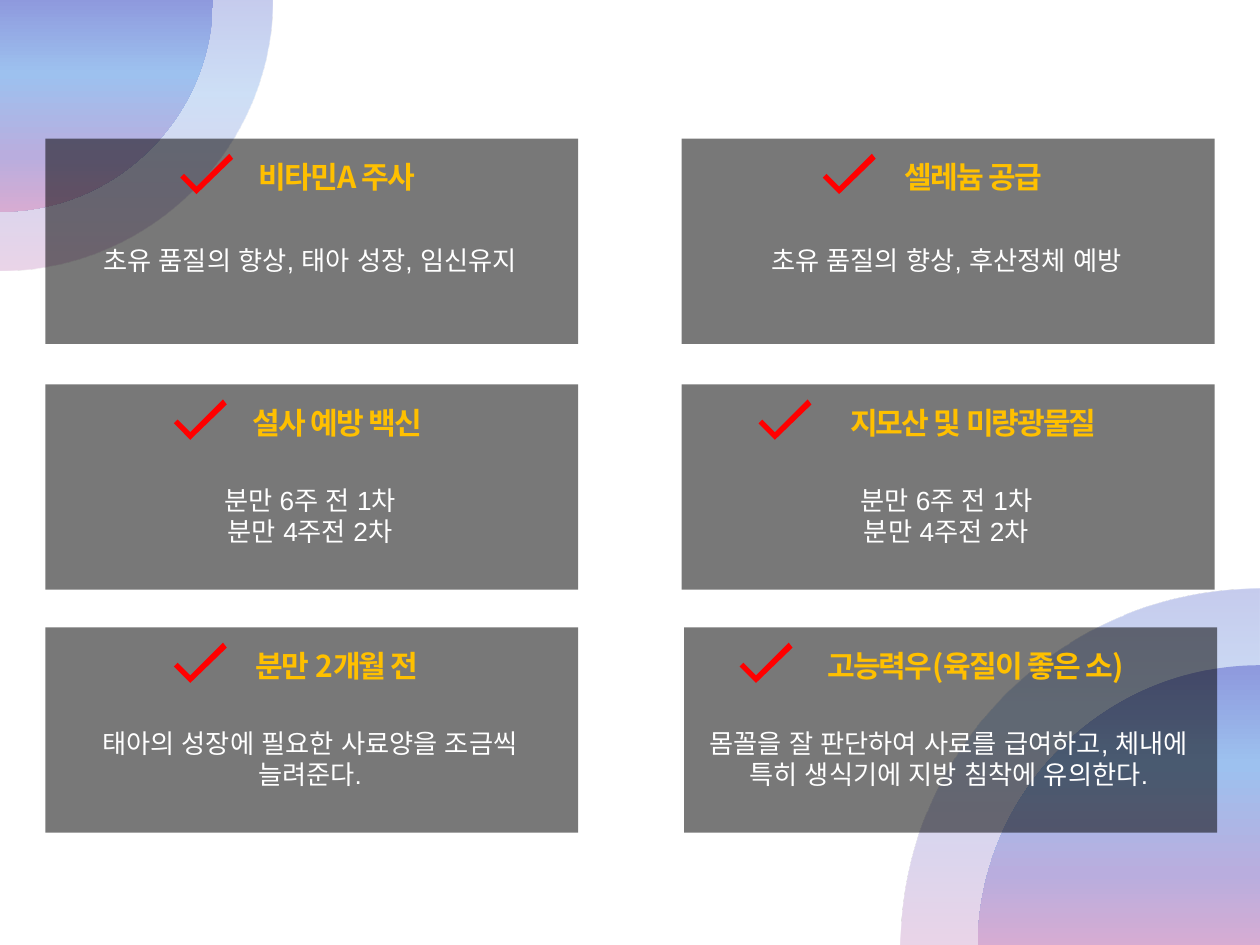
"""Build a slide of six check-marked cattle care cards between two corner arcs."""
from dataclasses import dataclass

from lxml import etree
from pptx import Presentation
from pptx.dml.color import RGBColor
from pptx.enum.lang import MSO_LANGUAGE_ID
from pptx.enum.shapes import MSO_SHAPE
from pptx.enum.text import MSO_AUTO_SIZE, PP_ALIGN
from pptx.oxml import parse_xml
from pptx.oxml.ns import nsdecls, qn
from pptx.util import Inches, Pt

RECTANGLE = MSO_SHAPE.RECTANGLE
CENTER = PP_ALIGN.CENTER
GROW = MSO_AUTO_SIZE.SHAPE_TO_FIT_TEXT
KOREAN = MSO_LANGUAGE_ID.KOREAN

SLIDE_W, SLIDE_H = 10, 7.5
COLUMNS = (0.36, 5.41)
ROWS = (1.1, 3.05, 4.98)
CARD_W, CARD_H = 4.23, 1.63
QUARTER_HANDLE = 0.55
CHECK_OUTLINE = [(0.13, 0.26), (0.03, 0.16), (0, 0.19), (0.13, 0.32), (0.42, 0.04), (0.39, 0)]


@dataclass(frozen=True)
class Theme:
    heading_font: str = "Noto Sans CJK KR"
    body_font: str = "Arial"
    heading_size: float = 17.2
    body_size: float = 15
    heading: str = "FFC000"
    body: str = "FFFFFF"
    check: str = "FF0000"
    panel: str = "000000"
    panel_opacity: int = 53
    halo_opacity: int = 50
    gradient: tuple = ((0, "8E99DD"), (35, "9DC1EF"), (74, "B9ADDE"), (100, "D7ACD2"))


@dataclass(frozen=True)
class Arc:
    center: tuple[float, float]
    reach: float
    opacity: int = 100


@dataclass(frozen=True)
class Card:
    column: int
    row: int
    heading: str
    lines: tuple[str, ...]
    check_offset: float
    body_offset: float = 0.74
    body_height: float = 0.69
    nudge: float = 0


THEME = Theme()
TOP_LEFT, BOTTOM_RIGHT = (0, -0.01), (SLIDE_W, 7.52)
ARCS = [
    Arc(BOTTOM_RIGHT, -2.85, THEME.halo_opacity),
    Arc(BOTTOM_RIGHT, -2.24),
    Arc(TOP_LEFT, 2.16, THEME.halo_opacity),
    Arc(TOP_LEFT, 1.69),
]
VACCINE_TIMES = ("분만 6주 전 1차", "분만 4주전 2차")
CARDS = [
    Card(0, 0, "비타민A 주사", ("초유 품질의 향상, 태아 성장, 임신유지",), 1.07, 0.79, 0.4),
    Card(1, 0, "셀레늄 공급", ("초유 품질의 향상, 후산정체 예방",), 1.12, 0.79, 0.4),
    Card(0, 1, "설사 예방 백신", VACCINE_TIMES, 1.02),
    Card(1, 1, "지모산 및 미량광물질", VACCINE_TIMES, 0.61),
    Card(0, 2, "분만 2개월 전", ("태아의 성장에 필요한 사료양을 조금씩 늘려준다.",), 1.02),
    Card(1, 2, "고능력우(육질이 좋은 소)",
         ("몸꼴을 잘 판단하여 사료를 급여하고, 체내에 특히 생식기에 지방 침착에 유의한다.",),
         0.44, body_height=0.97, nudge=0.02),
]


def add_outline(slide, points: list[tuple[float, float]]):
    """Draw a closed, unlined outline through points given in inches."""
    corners = [(Inches(x), Inches(y)) for x, y in points]
    builder = slide.shapes.build_freeform(*corners[0], scale=1.0)
    builder.add_line_segments(corners[1:], close=True)
    outline = builder.convert_to_shape()
    outline.shadow.inherit = False
    outline.line.fill.background()
    return outline


def round_edge(outline) -> None:
    """Turn the chord of a corner triangle into a quarter circle."""
    center, start, end = [
        (int(point.get("x")), int(point.get("y")))
        for point in outline._element.spPr.iter(qn("a:pt"))]
    chord = list(outline._element.spPr.iter(qn("a:lnTo")))[1]
    curve = etree.Element(qn("a:cubicBezTo"))
    handles = [
        [round(a + QUARTER_HANDLE * (b - c)) for a, b, c in zip(near, far, center)]
        for near, far in ((start, end), (end, start))]
    for x, y in (*handles, end):
        etree.SubElement(curve, qn("a:pt"), x=str(x), y=str(y))
    chord.getparent().replace(chord, curve)


def add_arc(slide, arc: Arc) -> None:
    """Draw a quarter disc with the vertical theme gradient."""
    x, y = arc.center
    disc = add_outline(slide, [arc.center, (x + arc.reach, y), (x, y + arc.reach)])
    round_edge(disc)
    stops = "".join(
        f'<a:gs pos="{position * 1000}"><a:srgbClr val="{color}">'
        f'<a:alpha val="{arc.opacity * 1000}"/></a:srgbClr></a:gs>'
        for position, color in THEME.gradient)
    gradient = parse_xml(
        f'<a:gradFill {nsdecls("a")} rotWithShape="0"><a:gsLst>{stops}</a:gsLst>'
        '<a:lin ang="5400000" scaled="0"/></a:gradFill>')
    disc._element.spPr.find(qn("a:custGeom")).addnext(gradient)


def add_panel(slide, left: float, top: float) -> None:
    """Draw the translucent backing of a card."""
    panel = slide.shapes.add_shape(
        RECTANGLE, Inches(left), Inches(top), Inches(CARD_W), Inches(CARD_H))
    panel.shadow.inherit = False
    panel.line.fill.background()
    panel.fill.solid()
    panel.fill.fore_color.rgb = RGBColor.from_string(THEME.panel)
    color = panel._element.spPr.find(qn("a:solidFill"))[0]
    etree.SubElement(color, qn("a:alpha"), val=str(THEME.panel_opacity * 1000))


def add_text(slide, lines: tuple[str, ...], *, left: float, top: float, width: float,
             height: float, font: str, size: float, color: str,
             bold: bool = False, spacing: float = 0) -> None:
    """Add centred Korean text, one paragraph per line."""
    frame = slide.shapes.add_textbox(
        Inches(left), Inches(top), Inches(width), Inches(height)).text_frame
    frame.word_wrap = True
    frame.auto_size = GROW
    for index, line in enumerate(lines):
        paragraph = frame.add_paragraph() if index else frame.paragraphs[0]
        paragraph.alignment = CENTER
        run = paragraph.add_run()
        run.text = line
        run.font.name = font
        run.font.size = Pt(size)
        run.font.bold = bold
        run.font.language_id = KOREAN
        run.font.color.rgb = RGBColor.from_string(color)
        properties = run._r.get_or_add_rPr()
        properties.set("spc", str(round(spacing * 100)))
        etree.SubElement(properties, qn("a:ea"), typeface=font)


def add_card(slide, card: Card) -> None:
    """Draw one card with its panel, heading, check mark and body."""
    left = COLUMNS[card.column] + card.nudge
    top = ROWS[card.row]
    add_panel(slide, left, top)
    add_text(slide, (card.heading,), left=left + 0.19, top=top + 0.11, width=4.25, height=0.44,
             font=THEME.heading_font, size=THEME.heading_size, color=THEME.heading,
             bold=True, spacing=-1.1)
    check = add_outline(
        slide, [(left + card.check_offset + x, top + 0.12 + y) for x, y in CHECK_OUTLINE])
    check.fill.solid()
    check.fill.fore_color.rgb = RGBColor.from_string(THEME.check)
    add_text(slide, card.lines, left=left - 0.01, top=top + card.body_offset, width=4.22,
             height=card.body_height, font=THEME.body_font, size=THEME.body_size,
             color=THEME.body)


def main() -> None:
    """Assemble and save the slide."""
    presentation = Presentation()
    presentation.slide_width, presentation.slide_height = Inches(SLIDE_W), Inches(SLIDE_H)
    slide = presentation.slides.add_slide(presentation.slide_layouts[6])
    for arc in ARCS:
        add_arc(slide, arc)
    for card in CARDS:
        add_card(slide, card)
    presentation.save("out.pptx")


if __name__ == "__main__":
    main()
